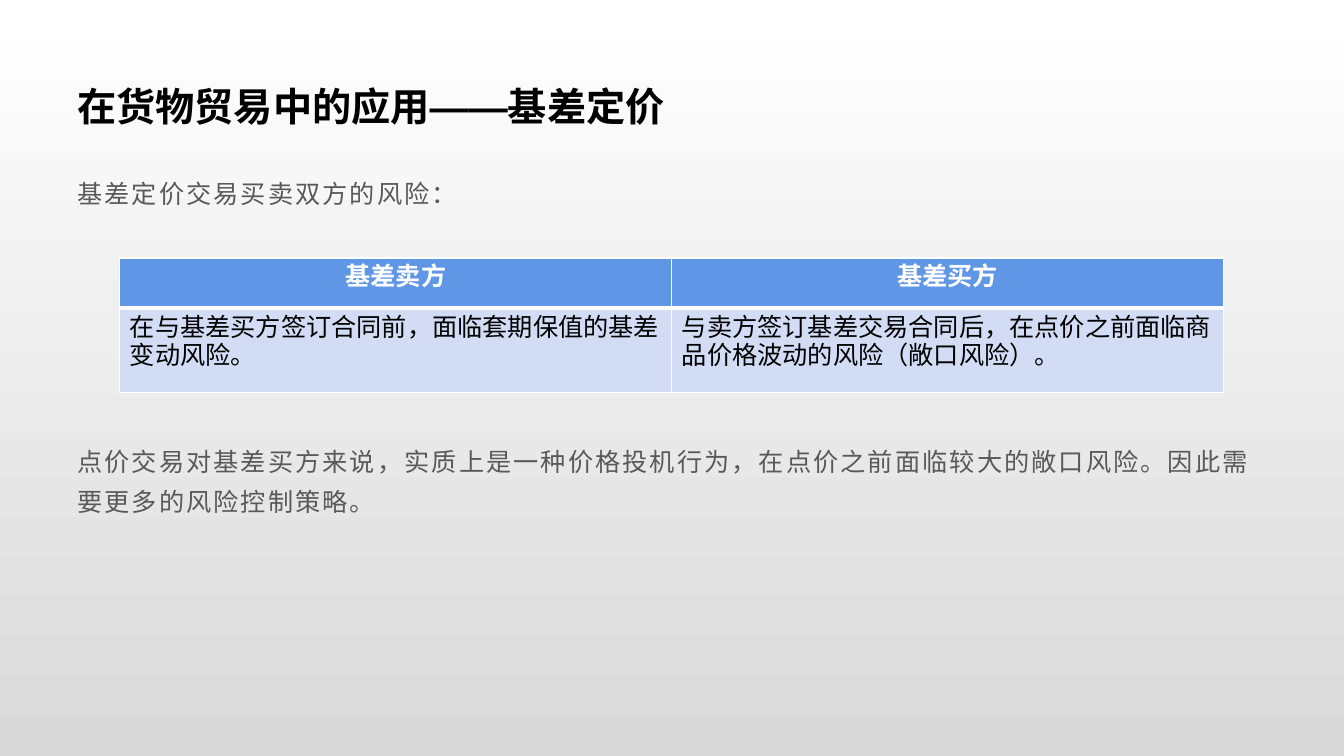
from lxml import etree
from pptx import Presentation
from pptx.dml.color import RGBColor
from pptx.enum import text
from pptx.oxml import ns
from pptx.util import Cm, Pt

BLACK = RGBColor(0x00, 0x00, 0x00)
WHITE = RGBColor(0xFF, 0xFF, 0xFF)
GREY = RGBColor(0x59, 0x59, 0x59)
SILVER = RGBColor(0xD9, 0xD9, 0xD9)
BLUE = RGBColor(0x60, 0x96, 0xE6)
PALE_BLUE = RGBColor(0xD2, 0xDD, 0xF5)

FONT = "Arial"
MARGIN, TEXT_WIDTH = Cm(1.7), Cm(30.48)
RISKS = [
    ["基差卖方", "基差买方"],
    [
        "在与基差买方签订合同前，面临套期保值的基差变动风险。",
        "与卖方签订基差交易合同后，在点价之前面临商品价格波动的风险（敞口风险）。",
    ],
]


def style_paragraph(para, size, color, bold=False, spacing=0):
    """Format every run of a paragraph."""
    for span in para.runs:
        span.font.size = Pt(size)
        span.font.bold = bold
        span.font.name = FONT
        span.font.color.rgb = color
        properties = span.font._element
        properties.set("spc", str(int(spacing * 100)))
        etree.SubElement(properties, ns.qn("a:ea"), typeface=FONT)


def add_text(page, top, height, words):
    """Add a wrapped text box across the page and return its frame."""
    box = page.shapes.add_textbox(MARGIN, top, TEXT_WIDTH, height)
    frame = box.text_frame
    frame.word_wrap = True
    frame.text = words
    return frame


def add_title(page, words):
    """Add the bold slide title."""
    frame = add_text(page, Cm(1.7), Cm(1.96), words)
    frame.vertical_anchor = text.MSO_ANCHOR.MIDDLE
    style_paragraph(frame.paragraphs[0], 28, BLACK, bold=True)


def add_body(page, top, height, words):
    """Add a grey, widely spaced body paragraph."""
    para = add_text(page, top, height, words).paragraphs[0]
    para.line_spacing = 1.3
    style_paragraph(para, 18, GREY, spacing=1.5)


def add_borders(cell, bottom_width):
    """Draw white borders around a table cell."""
    properties = cell._tc.get_or_add_tcPr()
    widths = {"lnL": 1, "lnR": 1, "lnT": 1, "lnB": bottom_width}
    for side, width in widths.items():
        line = etree.SubElement(properties, ns.qn(f"a:{side}"), w=str(Pt(width)))
        fill = etree.SubElement(line, ns.qn("a:solidFill"))
        etree.SubElement(fill, ns.qn("a:srgbClr"), val=str(WHITE))


def fill_cell(cell, words, header):
    """Write and format one table cell."""
    add_borders(cell, 3 if header else 1)
    cell.fill.solid()
    cell.fill.fore_color.rgb = BLUE if header else PALE_BLUE
    cell.text = words
    para = cell.text_frame.paragraphs[0]
    para.alignment = text.PP_ALIGN.CENTER if header else text.PP_ALIGN.LEFT
    style_paragraph(para, 18, WHITE if header else BLACK, bold=header)


def add_risk_table(page):
    """Add the table that compares seller and buyer risks."""
    frame = page.shapes.add_table(2, 2, Cm(3.02), Cm(6.5), Cm(27.82), Cm(3.4))
    table = frame.table
    for row, height, entries in zip(table.rows, (1.27, 2.13), RISKS):
        row.height = Cm(height)
        for cell, words in zip(row.cells, entries):
            fill_cell(cell, words, header=entries is RISKS[0])


def set_background(page):
    """Shade the page from white at the top to silver at the bottom."""
    fill = page.background.fill
    fill.gradient()
    fill.gradient_angle = 270
    for stop, color in zip(fill.gradient_stops, (WHITE, SILVER)):
        stop.color.rgb = color


def main():
    """Build and save the slide."""
    deck = Presentation()
    deck.slide_width, deck.slide_height = Cm(33.87), Cm(19.05)
    page = deck.slides.add_slide(deck.slide_layouts[6])
    set_background(page)
    add_title(page, "在货物贸易中的应用——基差定价")
    add_body(page, Cm(4.14), Cm(1.5), "基差定价交易买卖双方的风险：")
    add_risk_table(page)
    add_body(
        page,
        Cm(10.9),
        Cm(2.5),
        "点价交易对基差买方来说，实质上是一种价格投机行为，"
        "在点价之前面临较大的敞口风险。因此需要更多的风险控制策略。",
    )
    deck.save("out.pptx")


if __name__ == "__main__":
    main()
